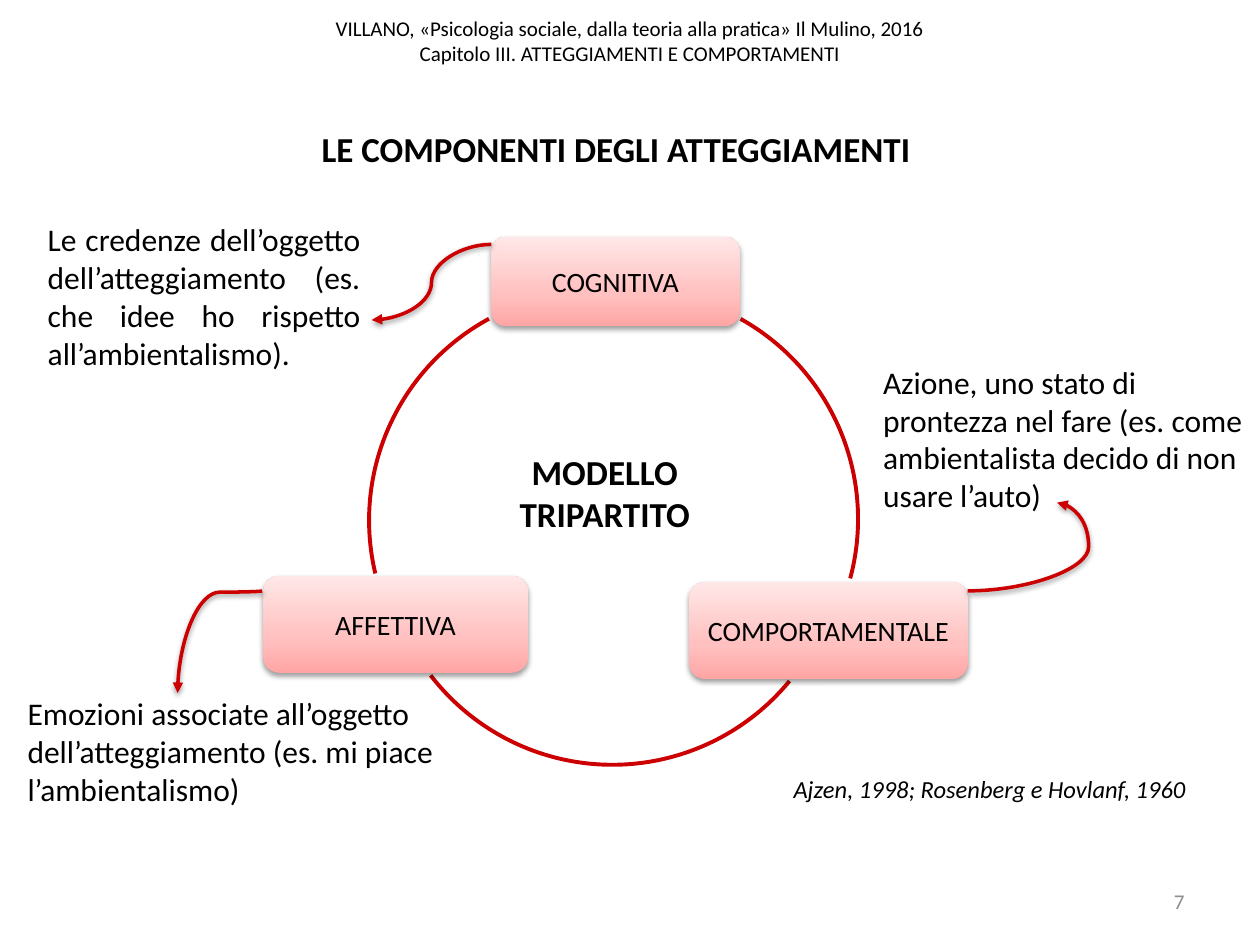
from dataclasses import dataclass
from typing import Optional

from pptx import Presentation
from pptx.dml.color import RGBColor
from pptx.enum.shapes import MSO_CONNECTOR, MSO_SHAPE
from pptx.enum.text import MSO_ANCHOR, PP_ALIGN
from pptx.oxml import parse_xml
from pptx.oxml.ns import nsdecls, qn
from pptx.util import Inches, Pt

ROUNDED, ARC = MSO_SHAPE.ROUNDED_RECTANGLE, MSO_SHAPE.ARC
CURVE = MSO_CONNECTOR.CURVE
LEFT, CENTER, RIGHT, JUSTIFY = PP_ALIGN.LEFT, PP_ALIGN.CENTER, PP_ALIGN.RIGHT, PP_ALIGN.JUSTIFY
TOP, MIDDLE = MSO_ANCHOR.TOP, MSO_ANCHOR.MIDDLE


@dataclass(frozen=True)
class Theme:
    font: str = "Calibri"
    ink: str = "000000"
    muted: str = "8C8C8C"
    accent: str = "CC0000"
    gradient: tuple = ((0, "FFA6A5"), (35, "FFC0BF"), (100, "FFE7E7"))
    small: int = 12
    source: int = 14
    component: int = 16
    body: int = 18
    title: int = 20
    ring_width: float = 2.25
    arrow_width: float = 2
    ring_radius: float = 1.82


THEME = Theme()


@dataclass(frozen=True)
class Box:
    left: float
    top: float
    width: float
    height: float

    def emu(self) -> tuple:
        return tuple(Inches(v) for v in (self.left, self.top, self.width, self.height))


@dataclass(frozen=True)
class Component:
    name: str
    box: Box
    description: str
    description_box: Box
    align: PP_ALIGN = LEFT


@dataclass(frozen=True)
class RingArc:
    """Part of the ring; angles in degrees, clockwise from the right."""
    center_x: float
    center_y: float
    start: float
    end: float


@dataclass(frozen=True)
class Arrow:
    start: tuple
    end: tuple
    bend: float = 0.5
    rotation: int = 0


COMPONENTS = (
    Component("COGNITIVA", Box(3.9, 1.88, 1.97, 0.71),
              "Le credenze dell’oggetto dell’atteggiamento (es. che idee ho rispetto "
              "all’ambientalismo).", Box(0.28, 1.7, 2.68, 1.31), JUSTIFY),
    Component("COMPORTAMENTALE", Box(5.47, 4.62, 2.21, 0.77),
              "Azione, uno stato di prontezza nel fare (es. come ambientalista decido "
              "di non usare l’auto)", Box(6.91, 2.83, 3.09, 1.31)),
    Component("AFFETTIVA", Box(2.09, 4.57, 2.1, 0.77),
              "Emozioni associate all’oggetto dell’atteggiamento (es. mi piace "
              "l’ambientalismo)", Box(0.12, 5.46, 4.65, 1.01)),
)
RING = (
    RingArc(4.99, 4.12, 299.2, 15),
    RingArc(4.86, 4.25, 39.4, 142.4),
    RingArc(4.75, 4.13, 166.6, 241.5),
)
ARROWS = (
    Arrow((1.34, 4.76), (2.15, 5.43), bend=0.012, rotation=90),
    Arrow((7.68, 4.69), (8.39, 3.99), bend=1.353),
    Arrow((3.9, 1.94), (2.95, 2.54)),
)


def write(shape, text: str, *, size: float, color: str = THEME.ink, bold: bool = False,
          italic: bool = False, align: PP_ALIGN = LEFT, anchor: MSO_ANCHOR = TOP) -> None:
    frame = shape.text_frame
    frame.word_wrap = True
    frame.vertical_anchor = anchor
    frame.text = text
    paragraph = frame.paragraphs[0]
    paragraph.alignment = align
    for run in paragraph.runs:
        font = run.font
        font.name, font.size = THEME.font, Pt(size)
        font.bold, font.italic = bold, italic
        font.color.rgb = RGBColor.from_string(color)


def add_text(slide, box: Box, text: str, **text_format) -> None:
    write(slide.shapes.add_textbox(*box.emu()), text, **text_format)


def add_shadow(shape) -> None:
    shape._element.spPr.append(parse_xml(
        f'<a:effectLst {nsdecls("a")}><a:outerShdw blurRad="40000" dist="20000" '
        'dir="5400000" rotWithShape="0"><a:srgbClr val="000000">'
        '<a:alpha val="38000"/></a:srgbClr></a:outerShdw></a:effectLst>'))


def fill_gradient(shape) -> None:
    stops = "".join(f'<a:gs pos="{position * 1000}"><a:srgbClr val="{color}"/></a:gs>'
                    for position, color in THEME.gradient)
    shape._element.spPr.find(qn("a:prstGeom")).addnext(parse_xml(
        f'<a:gradFill {nsdecls("a")} rotWithShape="1"><a:gsLst>{stops}</a:gsLst>'
        '<a:lin ang="16200000" scaled="0"/></a:gradFill>'))


def set_line(shape, width: float) -> None:
    shape.line.color.rgb = RGBColor.from_string(THEME.accent)
    shape.line.width = Pt(width)


def add_component(slide, component: Component) -> None:
    shape = slide.shapes.add_shape(ROUNDED, *component.box.emu())
    fill_gradient(shape)
    shape.line.fill.background()
    add_shadow(shape)
    write(shape, component.name, size=THEME.component, align=CENTER, anchor=MIDDLE)
    add_text(slide, component.description_box, component.description,
             size=THEME.body, align=component.align)


def add_ring_arc(slide, arc: RingArc) -> None:
    radius = THEME.ring_radius
    box = Box(arc.center_x - radius, arc.center_y - radius, 2 * radius, 2 * radius)
    shape = slide.shapes.add_shape(ARC, *box.emu())
    # One degree is 60000 units; adjustments are stored in units of 100000.
    shape.adjustments[0] = arc.start * 0.6
    shape.adjustments[1] = arc.end * 0.6
    shape.fill.background()
    set_line(shape, THEME.ring_width)
    shape.shadow.inherit = False


def add_arrow(slide, arrow: Arrow) -> None:
    connector = slide.shapes.add_connector(
        CURVE, *(Inches(v) for v in arrow.start + arrow.end))
    set_line(connector, THEME.arrow_width)
    properties = connector._element.spPr
    properties.find(qn("a:ln")).append(
        parse_xml(f'<a:tailEnd {nsdecls("a")} type="triangle"/>'))
    if arrow.rotation:
        properties.find(qn("a:xfrm")).set("rot", str(arrow.rotation * 60000))
    geometry = properties.find(qn("a:prstGeom"))
    for child in list(geometry):
        geometry.remove(child)
    geometry.append(parse_xml(
        f'<a:avLst {nsdecls("a")}><a:gd name="adj1" '
        f'fmla="val {round(arrow.bend * 100000)}"/></a:avLst>'))
    add_shadow(connector)


def main() -> None:
    deck = Presentation()
    deck.slide_width, deck.slide_height = Inches(10), Inches(7.5)
    slide = deck.slides.add_slide(deck.slide_layouts[6])

    add_text(slide, Box(0, -0.11, 10, 0.87),
             "VILLANO, «Psicologia sociale, dalla teoria alla pratica» Il Mulino, 2016\v"
             "Capitolo III. ATTEGGIAMENTI E COMPORTAMENTI",
             size=THEME.small, align=CENTER, anchor=MIDDLE)
    add_text(slide, Box(7.17, 6.95, 2.33, 0.4), "7", size=THEME.small,
             color=THEME.muted, align=RIGHT, anchor=MIDDLE)
    add_text(slide, Box(2.1, 0.96, 5.58, 0.44), "LE COMPONENTI DEGLI ATTEGGIAMENTI",
             size=THEME.title, bold=True, align=CENTER)
    for arc in RING:
        add_ring_arc(slide, arc)
    for component in COMPONENTS:
        add_component(slide, component)
    add_text(slide, Box(3.58, 3.53, 2.44, 0.77), "MODELLO TRIPARTITO",
             size=THEME.title, bold=True, align=CENTER)
    add_text(slide, Box(6.2, 6.09, 3.7, 0.34), "Ajzen, 1998; Rosenberg e Hovlanf, 1960",
             size=THEME.source, italic=True)
    for arrow in ARROWS:
        add_arrow(slide, arrow)
    deck.save("out.pptx")


if __name__ == "__main__":
    main()
